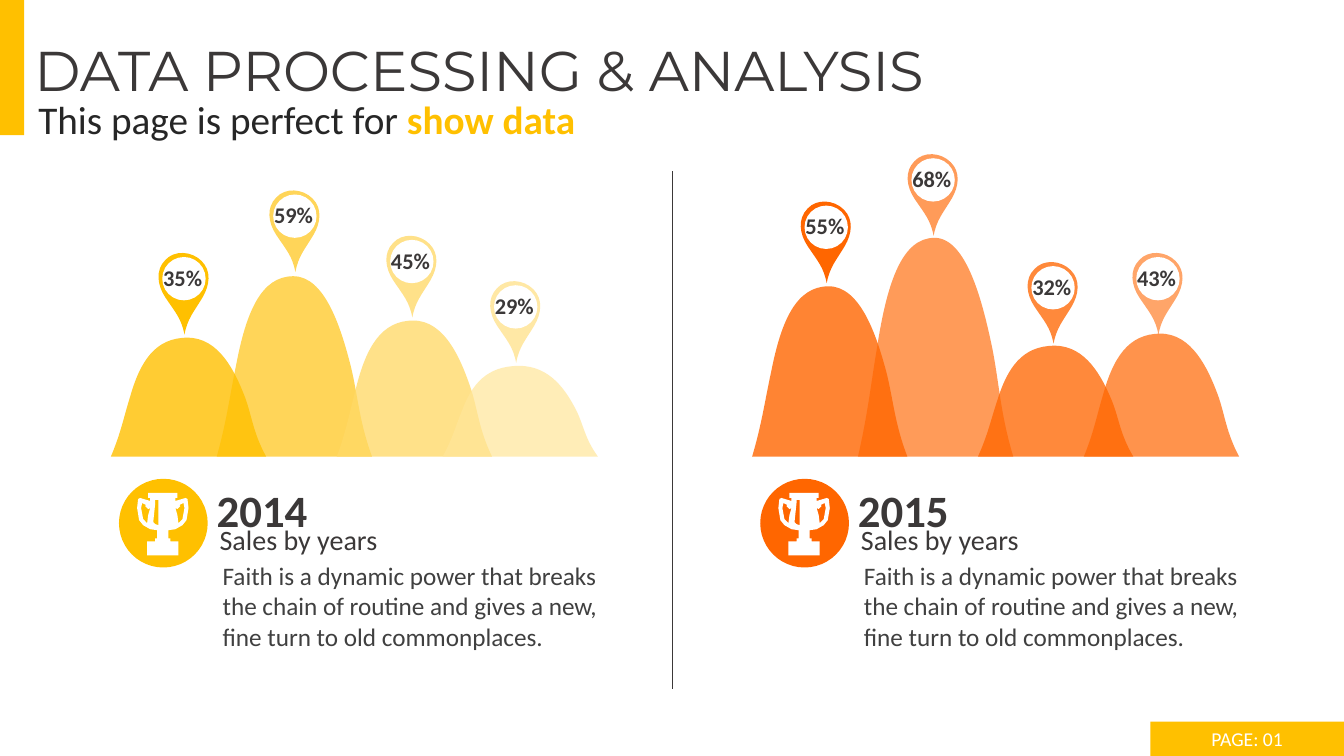
from pptx import Presentation
from pptx.dml.color import RGBColor
from pptx.enum.shapes import MSO_CONNECTOR as Connector, MSO_SHAPE as Preset
from pptx.enum.text import MSO_ANCHOR as Anchor, MSO_AUTO_SIZE as AutoSize, PP_ALIGN as Align
from pptx.oxml.ns import qn
from pptx.oxml.xmlchemy import OxmlElement
from pptx.util import Pt

PX = 9144
COLOURS = {
    "amber": "FFC000",
    "sand": "FFD966",
    "cream": "FFE699",
    "orange": "FF6600",
    "white": "FFFFFF",
    "heading": "3B3838",
    "subtitle": "262626",
    "body": "404040",
}
PANEL_STEP = 636
BASELINE = 453
HILL_LEFTS = (110, 215, 334, 439)
HILL_WIDTH = 154
HILL_CURVE = [
    (0, 1), (10, 0.8), (13, 0.66), (19, 0.5), (29, 0.2), (44, 0), (76, 0),
    (107, 0), (123, 0.28), (133, 0.5), (140, 0.66), (141, 0.8), (HILL_WIDTH, 1),
]
PIN_CURVE = [
    (17, -73), (27, -63), (25, -49), (18, -37), (9, -22), (3, -16), (0, 0),
    (-3, -16), (-9, -22), (-19, -37), (-27, -49), (-29, -64), (-19, -74),
    (-10, -84), (7, -83), (17, -73),
]
CUP_WIDTH = 51
CUP_SIDE = [
    (11, 0), (11, 5), (13, 5), (13, 8), (3, 5), (1, 6), (0, 15), (2, 27),
    (6, 32), (13, 36), (20, 37), (20, 45), (18, 45), (18, 48), (10, 48), (10, 62),
]
CUP_HANDLE = [(13, 15), (11, 22), (10, 30), (6, 26), (4, 15), (5, 10), (9, 12), (8, 13), (11, 16)]
CUP_SHINE = [(21, 7), (21, 32), (18, 31), (16, 29), (18, 10), (18, 7)]

SALES = {
    "2014": ("amber", [
        ("35%", 335, (183, 332), ("amber", 80), ("amber", 100)),
        ("59%", 274, (293, 270), ("amber", 65), ("amber", 65)),
        ("45%", 318, (409, 315), ("sand", 77), ("sand", 77)),
        ("29%", 363, (512, 360), ("cream", 70), ("sand", 59)),
    ]),
    "2015": ("orange", [
        ("55%", 284, (820, 281), ("orange", 80), ("orange", 100)),
        ("68%", 236, (926, 234), ("orange", 65), ("orange", 65)),
        ("32%", 343, (1045, 341), ("orange", 77), ("orange", 77)),
        ("43%", 331, (1149, 332), ("orange", 70), ("orange", 59)),
    ]),
}
DESCRIPTION = (
    "Faith is a dynamic power that breaks the chain of routine "
    "and gives a new, fine turn to old commonplaces."
)


def add_run(paragraph, text, *, size, colour="heading", bold=False, font="Calibri"):
    run = paragraph.add_run()
    run.text = text
    run.font.size = Pt(size)
    run.font.bold = bold
    run.font.name = font
    run.font.color.rgb = RGBColor.from_string(COLOURS[colour])


def mirrored(points):
    return [(CUP_WIDTH - x, y) for x, y in reversed(points)]


def bend(shape):
    lines = list(shape._element.spPr.iter(qn("a:lnTo")))
    for first in range(0, len(lines), 3):
        curve = OxmlElement("a:cubicBezTo")
        lines[first].addprevious(curve)
        for line in lines[first:first + 3]:
            curve.append(line[0])
            line.getparent().remove(line)


class SlideBuilder:
    def __init__(self, slide):
        self.slide = slide
        self.shapes = slide.shapes

    def paint(self, shape, colour, opacity=100):
        shape.shadow.inherit = False
        shape.fill.solid()
        shape.fill.fore_color.rgb = RGBColor.from_string(COLOURS[colour])
        if opacity < 100:
            for tint in shape._element.spPr.iter(qn("a:srgbClr")):
                alpha = OxmlElement("a:alpha")
                alpha.set("val", str(opacity * 1000))
                tint.append(alpha)
        shape.line.fill.background()
        return shape

    def preset(self, kind, box, colour):
        return self.paint(self.shapes.add_shape(kind, *(v * PX for v in box)), colour)

    def outline(self, contours, origin, colour, opacity=100):
        placed = [
            [((origin[0] + x) * PX, (origin[1] + y) * PX) for x, y in contour]
            for contour in contours
        ]
        builder = self.shapes.build_freeform(*placed[0][0])
        for index, contour in enumerate(placed):
            if index:
                builder.move_to(*contour[0])
            builder.add_line_segments(contour[1:], close=True)
        return self.paint(builder.convert_to_shape(), colour, opacity)

    def prepare(self, frame, wrap=False):
        frame.word_wrap = wrap
        frame.auto_size = AutoSize.NONE
        frame.vertical_anchor = Anchor.TOP
        paragraph = frame.paragraphs[0]
        paragraph.alignment = Align.LEFT
        paragraph.space_before = Pt(0)
        return paragraph

    def label(self, text, box, wrap=False, **style):
        frame = self.shapes.add_textbox(*(v * PX for v in box)).text_frame
        add_run(self.prepare(frame, wrap), text, **style)

    def placeholder(self, holder, box):
        holder.left, holder.top, holder.width, holder.height = (v * PX for v in box)
        return self.prepare(holder.text_frame, wrap=True)

    def divider(self, x, top, bottom):
        line = self.shapes.add_connector(Connector.STRAIGHT, x * PX, top * PX, x * PX, bottom * PX)
        line.line.color.rgb = RGBColor.from_string(COLOURS["heading"])
        line.line.width = Pt(1.25)
        line._element.spPr.append(OxmlElement("a:effectLst"))

    def hill(self, left, top, colour, opacity):
        height = BASELINE - top
        controls = [(x, y * height) for x, y in HILL_CURVE]
        bend(self.outline([controls], (left, top), colour, opacity))

    def pin(self, tip, percent, colour, opacity):
        x, y = tip
        bend(self.outline([PIN_CURVE], tip, colour, opacity))
        self.preset(Preset.OVAL, (x - 22, y - 77, 43, 43), "white")
        self.label(percent, (x - 31, y - 75, 60, 37), size=16, bold=True)

    def trophy(self, left, top, colour):
        self.preset(Preset.OVAL, (left, top, 88, 88), colour)
        cup = [CUP_SIDE + mirrored(CUP_SIDE), CUP_HANDLE, mirrored(CUP_HANDLE), CUP_SHINE]
        self.outline(cup, (left + 18, top + 14), "white")

    def sales_panel(self, offset, year, colour, sales):
        for left, (_, top, _, hill_tint, _) in zip(HILL_LEFTS, sales):
            self.hill(offset + left, top, *hill_tint)
        for percent, _, tip, _, pin_tint in sales:
            self.pin(tip, percent, *pin_tint)
        self.trophy(offset + 118, 475, colour)
        self.label(year, (offset + 205, 474, 111, 64), size=32, bold=True)
        self.label("Sales by years", (offset + 208, 513, 178, 44), size=20)
        self.label(DESCRIPTION, (offset + 211, 551, 423, 101), wrap=True, size=18, colour="body")


def main():
    deck = Presentation()
    deck.slide_width, deck.slide_height = 1333 * PX, 750 * PX
    builder = SlideBuilder(deck.slides.add_slide(deck.slide_layouts[0]))
    title, subtitle = builder.slide.placeholders

    heading = builder.placeholder(title, (24, 30, 1009, 77))
    add_run(heading, "DATA PROCESSING & ANALYSIS", size=40, font="Montserrat")
    tagline = builder.placeholder(subtitle, (28, 90, 569, 57))
    add_run(tagline, "This page is perfect for ", size=28, colour="subtitle")
    add_run(tagline, "show data", size=28, colour="amber", bold=True)

    builder.preset(Preset.RECTANGLE, (0, 0, 24, 134), "amber")
    footer = builder.preset(Preset.RECTANGLE, (1141, 716, 192, 34), "amber").text_frame
    footer.vertical_anchor = Anchor.MIDDLE
    footer.paragraphs[0].alignment = Align.CENTER
    add_run(footer.paragraphs[0], "PAGE: 01", size=14, colour="white")

    for index, (year, (colour, sales)) in enumerate(SALES.items()):
        builder.sales_panel(index * PANEL_STEP, year, colour, sales)
    builder.divider(667, 170, 684)
    deck.save("out.pptx")


if __name__ == "__main__":
    main()
